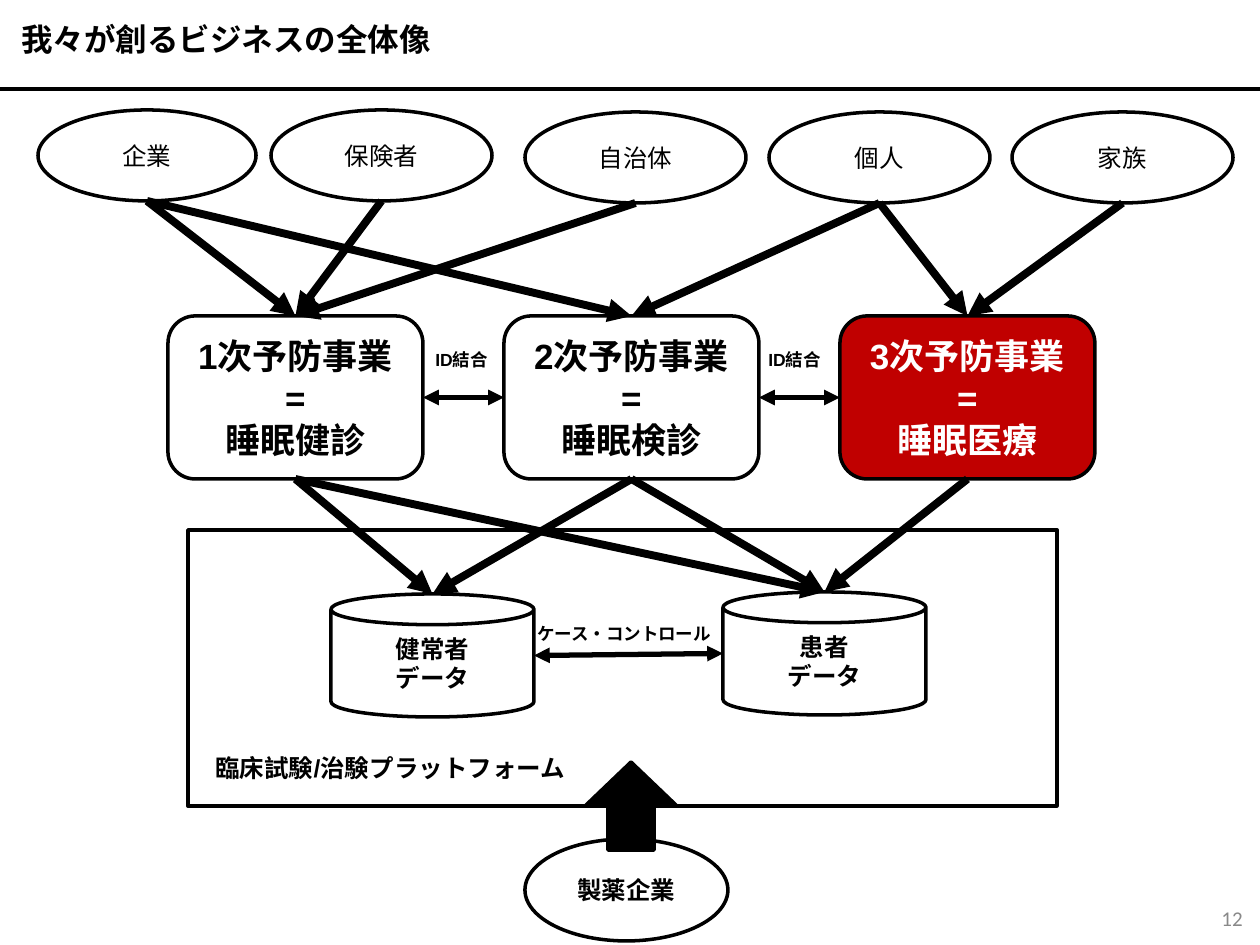
import pptx
import pptx.util
import pptx.dml.color
import pptx.enum.shapes
import pptx.enum.text
import pptx.oxml.ns
from lxml import etree

KIND = pptx.enum.shapes.MSO_SHAPE
ALIGN = pptx.enum.text.PP_ALIGN
ANCHOR = pptx.enum.text.MSO_ANCHOR
FIT = pptx.enum.text.MSO_AUTO_SIZE
TOP, LEFT, BOTTOM, RIGHT = range(4)


def px(n):
    return pptx.util.Emu(round(n * 914400 / 126))


def rgb(code):
    return pptx.dml.color.RGBColor.from_string(code)


class Page:
    """Style and current slide."""
    ink, paper, accent, gray = "000000", "FFFFFF", "C00000", "898989"
    font = "Arial"

    def __init__(self, slide):
        self.slide = slide
        self.shapes = slide.shapes

    def text(self, frame, lines, size, color, bold, align, font=None):
        for i, line in enumerate(lines):
            para = frame.paragraphs[0] if i == 0 else frame.add_paragraph()
            para.alignment = align
            run = para.add_run()
            run.text = line
            run.font.name = font or self.font
            run.font.size = pptx.util.Pt(size)
            run.font.bold = bold
            run.font.color.rgb = rgb(color)

    def shape(self, kind, box, lines=(), size=14, fill=None, color=None, bold=True):
        item = self.shapes.add_shape(kind, *map(px, box))
        item.shadow.inherit = False
        item.fill.solid()
        item.fill.fore_color.rgb = rgb(fill or self.paper)
        item.line.color.rgb = rgb(self.ink)
        item.line.width = pptx.util.Pt(2)
        item.text_frame.vertical_anchor = ANCHOR.MIDDLE
        self.text(item.text_frame, lines, size, color or self.ink, bold, ALIGN.CENTER)
        return item

    def label(self, box, text, size=10, color=None, bold=True, font=None,
              align=ALIGN.LEFT, wrap=True, grow=True):
        frame = self.shapes.add_textbox(*map(px, box)).text_frame
        frame.word_wrap = wrap
        if grow:
            frame.auto_size = FIT.SHAPE_TO_FIT_TEXT
        else:
            frame.vertical_anchor = ANCHOR.MIDDLE
        self.text(frame, [text], size, color or self.ink, bold, align, font)

    def line(self, start, end, width, heads=()):
        item = self.shapes.add_connector(
            pptx.enum.shapes.MSO_CONNECTOR.STRAIGHT, *start, *end)
        item.line.color.rgb = rgb(self.ink)
        item.line.width = pptx.util.Pt(width)
        props = item.element.find(pptx.oxml.ns.qn("p:spPr"))
        stroke = props.find(pptx.oxml.ns.qn("a:ln"))
        for tag in heads:
            etree.SubElement(stroke, pptx.oxml.ns.qn(tag), type="triangle")
        etree.SubElement(props, pptx.oxml.ns.qn("a:effectLst"))
        return item

    def spot(self, item, side):
        x, y = item.left + item.width // 2, item.top + item.height // 2
        return {TOP: (x, item.top), LEFT: (item.left, y),
                BOTTOM: (x, item.top + item.height),
                RIGHT: (item.left + item.width, y)}[side]

    def link(self, a, b, both=False):
        out, into = (RIGHT, LEFT) if both else (BOTTOM, TOP)
        heads = ("a:headEnd", "a:tailEnd") if both else ("a:tailEnd",)
        line = self.line(self.spot(a, out), self.spot(b, into),
                         3 if both else 4.5, heads)
        # Only the rounded boxes number their sides like a rectangle
        if a.auto_shape_type == KIND.ROUNDED_RECTANGLE:
            line.begin_connect(a, out)
        if b.auto_shape_type == KIND.ROUNDED_RECTANGLE:
            line.end_connect(b, into)


def main():
    deck = pptx.Presentation()
    deck.slide_width, deck.slide_height = px(1260), px(945)
    page = Page(deck.slides.add_slide(deck.slide_layouts[6]))

    # Title, rule and page number
    page.line((px(0), px(89)), (px(1260), px(89)), 2.75)
    page.label((9, 14, 1057, 52), "我々が創るビジネスの全体像", 18,
               font="TeX Gyre Adventor")
    page.label((961, 893, 294, 50), "12", 12, page.gray, False, "Calibri",
               ALIGN.RIGHT, grow=False)

    # Trial platform
    page.shape(KIND.RECTANGLE, (188, 530, 869, 276))
    page.label((203, 747, 403, 43), "臨床試験/治験プラットフォーム", 14)

    # Clients
    clients = [page.shape(KIND.OVAL, (x, y, w, 91), [name], bold=False)
               for x, y, w, name in [(38, 110, 218, "企業"), (271, 110, 221, "保険者"),
                                     (525, 112, 221, "自治体"), (769, 112, 221, "個人"),
                                     (1012, 112, 221, "家族")]]

    # Prevention services
    services = []
    for i, name in enumerate(["睡眠健診", "睡眠検診", "睡眠医療"]):
        last = i == 2
        services.append(page.shape(
            KIND.ROUNDED_RECTANGLE, (168 + 336 * i, 316, 255, 163),
            [f"{i + 1}次予防事業", "=", name], 20,
            page.accent if last else page.paper, page.paper if last else page.ink))

    # Data stores
    stores = [page.shape(KIND.CAN, (x, y, 203, 123), [name, "データ"])
              for x, y, name in [(331, 594, "健常者"), (723, 592, "患者")]]

    # Flows from clients to services to data
    for i, j in [(0, 0), (1, 0), (2, 0), (0, 1), (3, 2), (3, 1), (4, 2)]:
        page.link(clients[i], services[j])
    for i, j in [(0, 0), (1, 0), (2, 1), (1, 1), (0, 1)]:
        page.link(services[i], stores[j])

    # Two-way ties
    for a, b in zip(services, services[1:]):
        page.link(a, b, both=True)
    for x in (423, 756):
        page.label((x, 343, 81, 34), "ID結合", wrap=False)
    page.link(*stores, both=True)
    page.label((525, 617, 203, 34), "ケース・コントロール")

    # Drug makers feeding the platform
    page.shape(KIND.OVAL, (525, 839, 203, 102), ["製薬企業"])
    feed = page.shape(KIND.RIGHT_ARROW, (587, 760, 88, 92), fill=page.ink)
    feed.rotation = 270

    deck.save("out.pptx")


if __name__ == "__main__":
    main()
